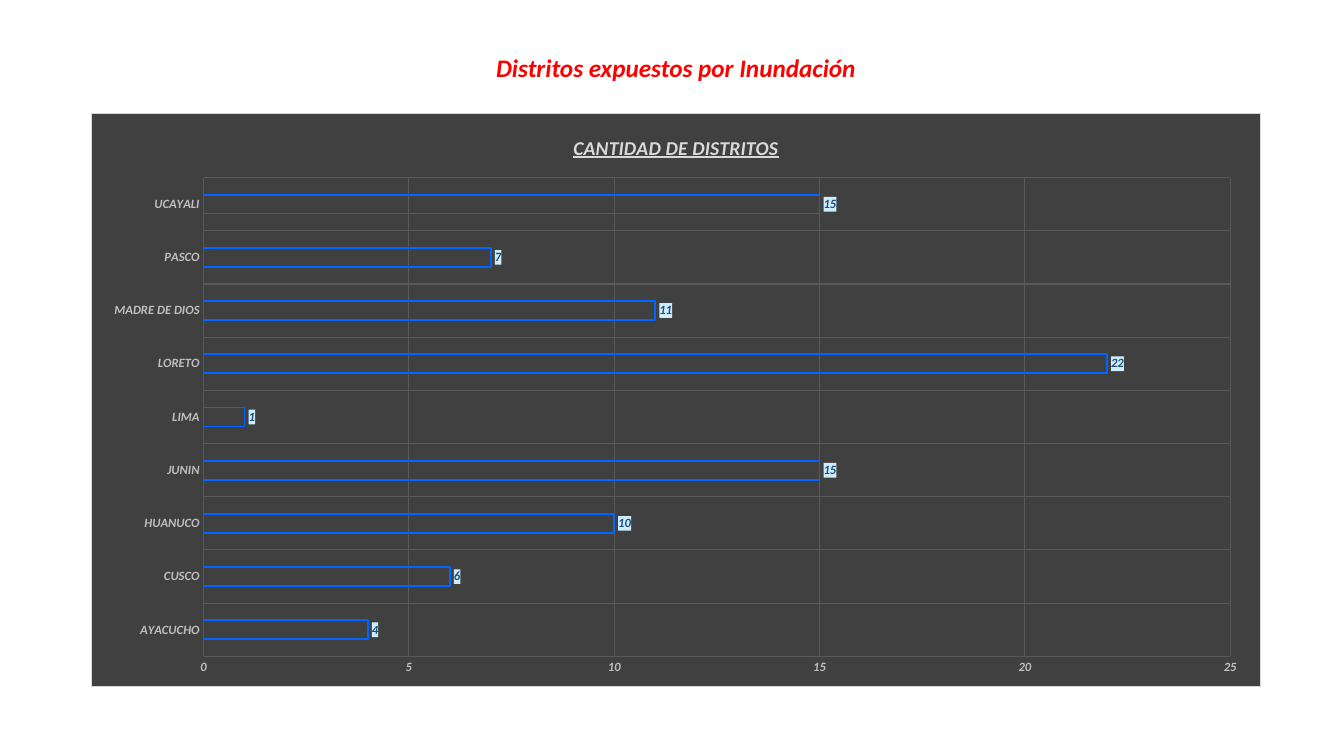
from lxml.etree import SubElement
from pptx import Presentation
from pptx.chart.data import CategoryChartData
from pptx.dml.color import RGBColor
from pptx.enum.chart import XL_CHART_TYPE, XL_LABEL_POSITION, XL_TICK_MARK
from pptx.enum.text import MSO_ANCHOR, PP_ALIGN
from pptx.oxml import parse_xml
from pptx.oxml.ns import nsdecls, qn
from pptx.util import Inches, Pt

COLORS = {
    "heading": "FF0000",
    "panel": "404040",
    "border": "D9D9D9",
    "grid": "595959",
    "axis": "BFBFBF",
    "bar": "0066FF",
    "label": "1F4E79",
    "label_fill": "CCECFF",
}

DISTRICTS = {
    "AYACUCHO": 4,
    "CUSCO": 6,
    "HUANUCO": 10,
    "JUNIN": 15,
    "LIMA": 1,
    "LORETO": 22,
    "MADRE DE DIOS": 11,
    "PASCO": 7,
    "UCAYALI": 15,
}


def rgb(name):
    return RGBColor.from_string(COLORS[name])


def style_font(font, size, color, underline=None):
    font.name = "Calibri"
    font.size = Pt(size)
    font.bold = font.italic = True
    font.underline = underline
    font.color.rgb = rgb(color)


def write_text(tf, text, **style):
    p = tf.paragraphs[0]
    p.alignment = PP_ALIGN.CENTER
    r = p.add_run()
    r.text = text
    style_font(r.font, **style)


def fill_xml(fill, border=None):
    line = ""
    if border:
        line = (f'<a:ln w="{Pt(0.75)}"><a:solidFill><a:srgbClr val="{COLORS[border]}"/>'
                "</a:solidFill></a:ln>")
    return parse_xml(
        f'<c:spPr {nsdecls("c", "a")}><a:solidFill><a:srgbClr val="{COLORS[fill]}"/>'
        f"</a:solidFill>{line}</c:spPr>")


class SlideBuilder:
    def __init__(self, prs):
        self.slide = prs.slides.add_slide(prs.slide_layouts[5])

    def title(self, text, x, y, w, h):
        sp = self.slide.shapes.title
        sp.left, sp.top, sp.width, sp.height = map(Inches, (x, y, w, h))
        tf = sp.text_frame
        tf.word_wrap = False
        tf.vertical_anchor = MSO_ANCHOR.MIDDLE
        write_text(tf, text, size=18, color="heading")

    def bar_chart(self, title, values, x, y, w, h):
        data = CategoryChartData(number_format="#,##0")
        data.categories = list(values)
        data.add_series("Series 1", list(values.values()))
        chart = self.slide.shapes.add_chart(
            XL_CHART_TYPE.BAR_CLUSTERED, *map(Inches, (x, y, w, h)), data).chart
        chart.has_legend = False
        chart.font.name = "Calibri"
        chart.font.size = Pt(10)
        write_text(chart.chart_title.text_frame, title, size=14, color="border", underline=True)
        chart.chart_title.include_in_layout = False

        # Bars
        plot = chart.plots[0]
        plot.gap_width, plot.overlap = 182, -50
        plot.vary_by_categories = False
        bars = plot.series[0].format
        bars.fill.background()
        bars.line.color.rgb = rgb("bar")
        bars.line.width = Pt(1.25)

        # Axes
        for axis in (chart.category_axis, chart.value_axis):
            axis.major_tick_mark = axis.minor_tick_mark = XL_TICK_MARK.NONE
            axis.format.line.fill.background()
            axis.has_major_gridlines = True
            grid = axis.major_gridlines.format.line
            grid.color.rgb = rgb("grid")
            grid.width = Pt(0.75)
            style_font(axis.tick_labels.font, 9, "axis")
        axis.minimum_scale, axis.maximum_scale, axis.major_unit = 0, 25, 5
        axis.tick_labels.number_format = "#,##0"
        axis.tick_labels.number_format_is_linked = False

        # Value labels
        space = chart.element
        labels = plot.series[0].data_labels
        labels.show_value = True
        labels.position = XL_LABEL_POSITION.OUTSIDE_END
        labels.number_format = "#,##0"
        labels.number_format_is_linked = False
        style_font(labels.font, 9, "label")
        label_text = space.find(f".//{qn('c:dLbls')}/{qn('c:txPr')}")
        label_text.addprevious(fill_xml("label_fill"))

        # Panel and plot area
        space.find(qn("c:chart")).addnext(fill_xml("panel", "border"))
        area = space.find(".//" + qn("c:plotArea"))
        layout = area.find(qn("c:layout"))
        if layout is None:
            layout = SubElement(area, qn("c:layout"))
            area.insert(0, layout)
        manual = SubElement(layout, qn("c:manualLayout"))
        for tag, val in (("layoutTarget", "inner"), ("xMode", "edge"), ("yMode", "edge"),
                         ("x", 0.096), ("y", 0.112), ("w", 0.878), ("h", 0.835)):
            SubElement(manual, qn("c:" + tag)).set("val", str(val))


def main():
    prs = Presentation()
    prs.slide_width, prs.slide_height = Inches(13.33), Inches(7.5)
    page = SlideBuilder(prs)
    page.title("Distritos expuestos por Inundación", 4.8, 0.47, 3.81, 0.4)
    page.bar_chart("CANTIDAD DE DISTRITOS", DISTRICTS, 0.9, 1.12, 11.61, 5.7)
    prs.save("out.pptx")


if __name__ == "__main__":
    main()
